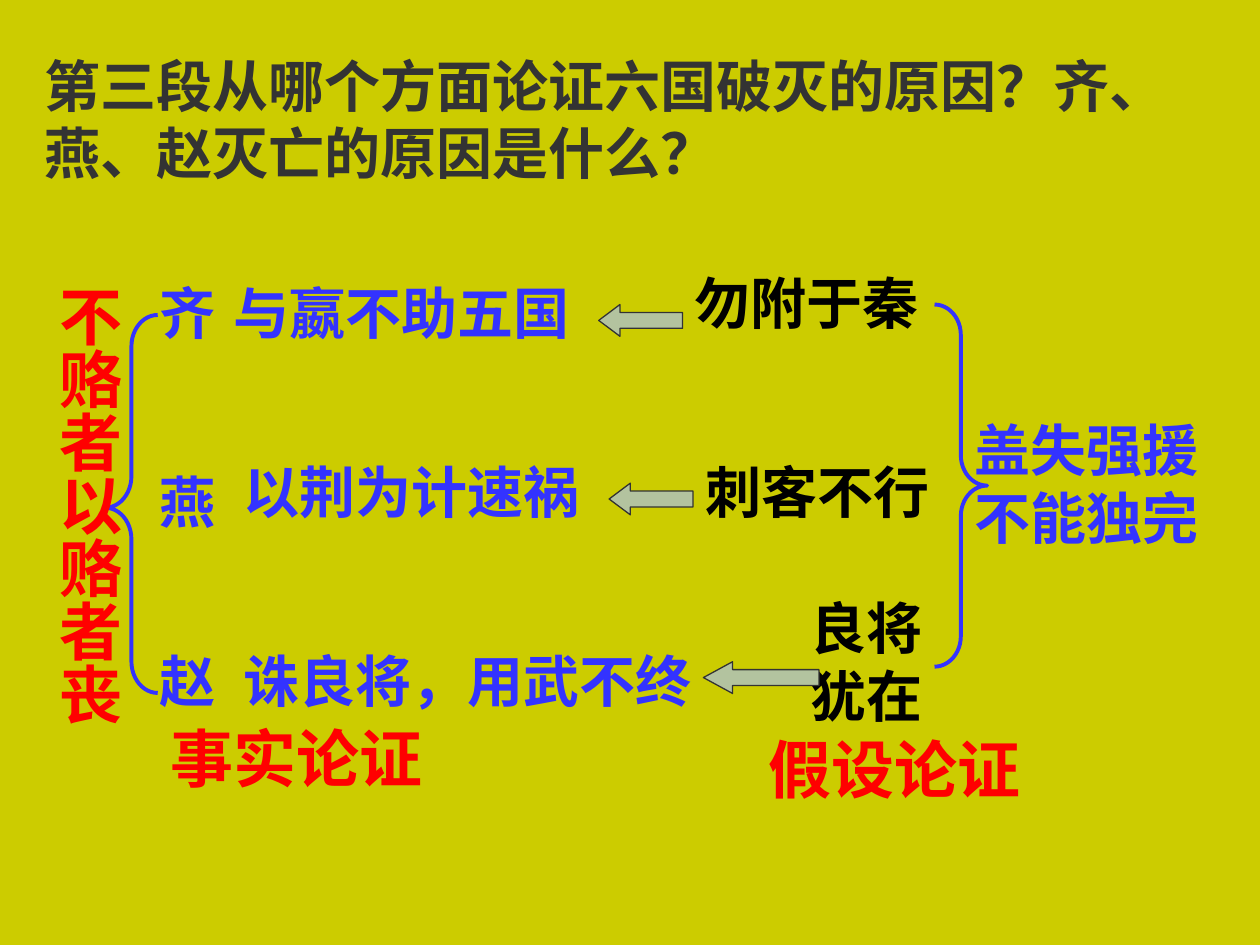
from pptx import Presentation
from pptx.dml.color import RGBColor
from pptx.enum.shapes import MSO_SHAPE
from pptx.enum.text import MSO_ANCHOR, MSO_AUTO_SIZE, PP_ALIGN
from pptx.util import Cm, Pt

BLUE = "3333FF"
RED = "FF0000"
BLACK = "000000"
GRAY = "333333"
SAGE = "B3C39F"
OLIVE = "CCCC00"
SERIF = "Times New Roman"
SANS = "Arial"


def color(value):
    return RGBColor.from_string(value)


def add_run(paragraph, text, font_name, size, text_color):
    run = paragraph.add_run()
    run.text = text
    run.font.name = font_name
    run.font.size = Pt(size)
    run.font.bold = True
    run.font.color.rgb = color(text_color)


def set_title(slide, parts):
    title = slide.shapes.title
    title.left, title.top = Cm(0.64), Cm(0.91)
    title.width, title.height = Cm(23.7), Cm(3)
    frame = title.text_frame
    frame.auto_size = MSO_AUTO_SIZE.NONE
    frame.vertical_anchor = MSO_ANCHOR.TOP
    paragraph = frame.paragraphs[0]
    paragraph.alignment = PP_ALIGN.LEFT
    for text, font_name in parts:
        add_run(paragraph, text, font_name, 32, GRAY)


def add_text(slide, text, box, font_name, size, text_color, wrap=True):
    shape = slide.shapes.add_textbox(*map(Cm, box))
    frame = shape.text_frame
    frame.word_wrap = wrap
    add_run(frame.paragraphs[0], text, font_name, size, text_color)
    return shape


def add_vertical_text(slide, text, box, font_name, size, text_color):
    shape = add_text(slide, text, box, font_name, size, text_color)
    shape.text_frame._txBody.bodyPr.set("vert", "eaVert")


def add_preset(slide, kind, box, adjustments, line_color, line_width):
    shape = slide.shapes.add_shape(kind, *map(Cm, box))
    shape.shadow.inherit = False
    for index, value in enumerate(adjustments):
        shape.adjustments[index] = value
    shape.line.color.rgb = color(line_color)
    shape.line.width = Pt(line_width)
    return shape


def add_brace(slide, kind, box, adjustments):
    brace = add_preset(slide, kind, box, adjustments, BLUE, 2.25)
    brace.fill.background()


def add_arrow(slide, left, top, width, head):
    box = (left, top, width, 0.64)
    arrow = add_preset(slide, MSO_SHAPE.LEFT_ARROW, box, (0.5, head), GRAY, 0.75)
    arrow.fill.solid()
    arrow.fill.fore_color.rgb = color(SAGE)


def main():
    presentation = Presentation()
    presentation.slide_width = Cm(25.4)
    presentation.slide_height = Cm(19.05)
    slide = presentation.slides.add_slide(presentation.slide_layouts[5])
    slide.background.fill.solid()
    slide.background.fill.fore_color.rgb = color(OLIVE)

    set_title(slide, [
        ("第三段从哪个方面论证六国破灭的原因？", SANS),
        ("齐、燕、赵灭亡的原因是什么？", SERIF),
    ])

    add_brace(slide, MSO_SHAPE.LEFT_BRACE, (2.12, 6.35, 1.06, 7.62), (0.6, 0.51))
    facts = [
        ("齐", 5.5, "与嬴不助五国", 4.45, 5.5, 7.29),
        ("燕", 9.31, "以荆为计速祸", 4.66, 9.1, 7.29),
        ("赵", 12.91, "诛良将，用武不终", 4.66, 12.91, 9.55),
    ]
    for state, state_top, fact, left, top, width in facts:
        add_text(slide, state, (2.96, state_top, 1.64, 1.61), SERIF, 32, BLUE, False)
        add_text(slide, fact, (left, top, width, 1.61), SERIF, 32, BLUE, False)

    add_brace(slide, MSO_SHAPE.RIGHT_BRACE, (18.84, 6.14, 1.06, 7.3), (0.58, 0.5))
    add_text(slide, "盖失强援不能独完", (19.39, 8.26, 6.01, 2.96), SERIF, 32, BLUE)
    add_vertical_text(slide, "不赂者以赂者丧", (0.64, 5.5, 2.04, 9.74), SANS, 36, RED)

    hypotheses = [
        ("勿附于秦", (13.76, 5.29, 5.08, 1.61)),
        ("刺客不行", (13.97, 9.1, 5.29, 1.61)),
        ("良将犹在", (16.09, 11.85, 3.6, 2.96)),
    ]
    for text, box in hypotheses:
        add_text(slide, text, box, SANS, 32, BLACK)

    arrows = [
        (12.07, 6.14, 1.69, 0.67),
        (12.28, 9.74, 1.69, 0.67),
        (14.18, 13.34, 2.33, 0.92),
    ]
    for left, top, width, head in arrows:
        add_arrow(slide, left, top, width, head)

    for text, left, top in [("事实论证", 3.18, 14.39), ("假设论证", 15.24, 14.6)]:
        add_text(slide, text, (left, top, 8.04, 1.78), SANS, 36, RED)

    presentation.save("out.pptx")


if __name__ == "__main__":
    main()
